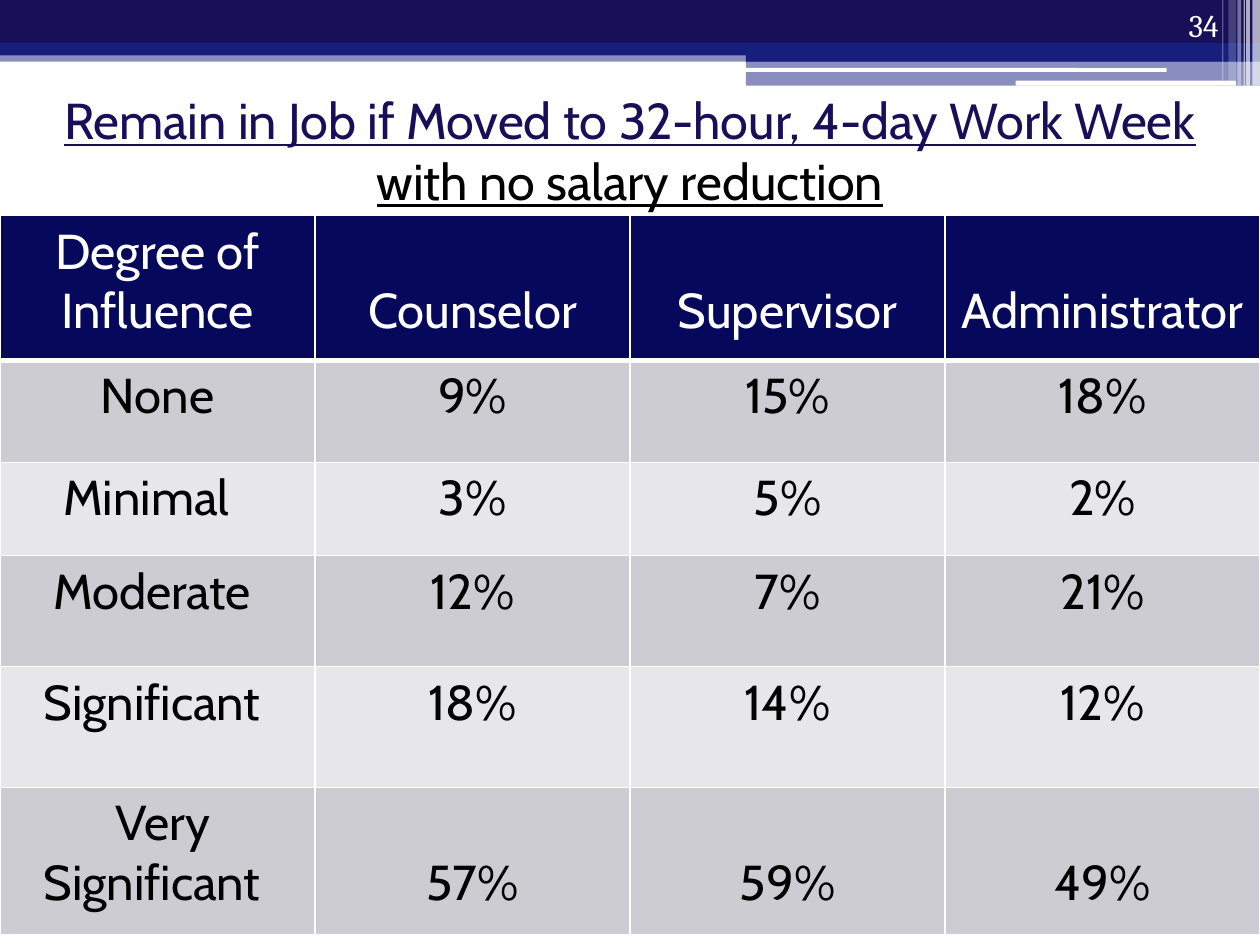
from lxml import etree
from pptx import Presentation
from pptx.dml.color import RGBColor
from pptx.enum.shapes import MSO_SHAPE
from pptx.enum.text import MSO_ANCHOR, PP_ALIGN
from pptx.oxml.ns import qn
from pptx.util import Inches, Pt

RECT, ROUNDED = MSO_SHAPE.RECTANGLE, MSO_SHAPE.ROUNDED_RECTANGLE
CENTER, RIGHT = PP_ALIGN.CENTER, PP_ALIGN.RIGHT
TOP, MIDDLE, BOTTOM = MSO_ANCHOR.TOP, MSO_ANCHOR.MIDDLE, MSO_ANCHOR.BOTTOM

COLUMNS, ROWS = 100, 75
NAVY, BLUE, WHITE, BLACK = "171059", "161E7E", "FFFFFF", "000000"
HEADER, BANDS = "06085B", ("E7E7EA", "CCCCD2")
BODY_SIZE, TEXT_LINE = 28, 4.7


def color(hex_code):
    return RGBColor.from_string(hex_code)


class SlideBuilder:
    """Holds the style and the current slide; lengths are grid columns and rows."""

    font = "Cabin"

    def __init__(self, deck):
        self.width, self.height = deck.slide_width, deck.slide_height
        self.slide = deck.slides.add_slide(deck.slide_layouts[6])

    def x(self, columns):
        return round(self.width * columns / COLUMNS)

    def y(self, rows):
        return round(self.height * rows / ROWS)

    def area(self, left, top, width, height):
        return self.x(left), self.y(top), self.x(width), self.y(height)

    def bar(self, box, fill, opacity=100, kind=RECT):
        bar = self.slide.shapes.add_shape(kind, *self.area(*box))
        bar.shadow.inherit = False
        bar.line.fill.background()
        bar.fill.solid()
        bar.fill.fore_color.rgb = color(fill)
        if opacity < 100:
            rgb = bar.fill._xPr.find(".//" + qn("a:srgbClr"))
            etree.SubElement(rgb, qn("a:alpha"), val=str(opacity * 1000))

    def style(self, run, size, ink, font=None, underline=None):
        run.font.name = font or self.font
        run.font.size = Pt(size)
        run.font.bold = False
        run.font.underline = underline
        run.font.color.rgb = color(ink)

    def text(self, box, parts, size, anchor, align, font=None, underline=None):
        frame = self.slide.shapes.add_textbox(*self.area(*box)).text_frame
        frame.word_wrap = True
        frame.vertical_anchor = anchor
        paragraph = frame.paragraphs[0]
        paragraph.alignment = align
        for words, ink in parts:
            run = paragraph.add_run()
            run.text = words
            self.style(run, size, ink, font, underline)

    def borders(self, cell, **widths):
        properties = cell._tc.get_or_add_tcPr()
        for index, side in enumerate("LRTB"):
            line = etree.Element(qn("a:ln" + side), w=str(Pt(widths.get(side, 1))))
            fill = etree.SubElement(line, qn("a:solidFill"))
            etree.SubElement(fill, qn("a:srgbClr"), val=WHITE)
            properties.insert(index, line)

    def table(self, box, rows, heights):
        grid = self.slide.shapes.add_table(len(rows), len(rows[0]), *self.area(*box)).table
        for r, (values, height) in enumerate(zip(rows, heights)):
            grid.rows[r].height = self.y(height)
            two_line_label = r in (0, len(rows) - 1)
            for c, value in enumerate(values):
                cell = grid.cell(r, c)
                cell.fill.solid()
                cell.fill.fore_color.rgb = color(BANDS[r % 2] if r else HEADER)
                self.borders(cell, **({"B": 3} if r == 0 else {"T": 3} if r == 1 else {}))
                cell.vertical_anchor = TOP
                # Values sit level with the second line of a two-line label
                if two_line_label and c:
                    cell.margin_top = self.y(0.5 + TEXT_LINE)
                cell.text_frame.text = value
                paragraph = cell.text_frame.paragraphs[0]
                paragraph.alignment = CENTER
                self.style(paragraph.runs[0], BODY_SIZE, BLACK if r else WHITE)
        return grid


def main():
    deck = Presentation()
    deck.slide_width, deck.slide_height = Inches(10), Inches(7.5)
    page = SlideBuilder(deck)

    # Banner across the top
    page.bar((0, 4, 100, 0.9), BLUE, 50)
    page.bar((0, 0, 100, 3.4), NAVY)
    page.bar((0, 3.4, 100, 1), BLUE)
    page.bar((59.2, 3.9, 40.8, 1), BLUE)
    page.bar((59.2, 4.8, 40.8, 2), BLUE, 50)
    page.bar((59.1, 5.4, 33.5, 0.3), WHITE, kind=ROUNDED)
    page.bar((80.6, 6.4, 17.5, 0.4), WHITE, kind=ROUNDED)

    # Stripes at the right edge: left, width, height, opacity
    for left, width, height, opacity in (
        (99.4, 0.6, 6.8, 65), (98.9, 0.3, 6.8, 65), (98.7, 0.1, 6.8, 60),
        (98.2, 0.3, 6.8, 40), (97.5, 0.6, 6.4, 20), (97, 0.1, 6.4, 30),
    ):
        page.bar((left, 0, width, height), WHITE, opacity)

    # Title
    page.text((3.5, 6.6, 93, 10.6),
              [("Remain in Job if Moved to 32-hour, 4-day Work Week ", NAVY),
               ("with no salary reduction", BLACK)],
              28.8, MIDDLE, CENTER, underline=True)

    # Survey results
    results = page.table((0, 17.1, 100, 57), [
        ("Degree of Influence", "Counselor", "Supervisor", "Administrator"),
        ("None", "9%", "15%", "18%"),
        ("Minimal ", "3%", "5%", "2%"),
        ("Moderate ", "12%", "7%", "21%"),
        ("Significant ", "18%", "14%", "12%"),
        (" Very Significant ", "57%", "59%", "49%"),
    ], (11.5, 8.1, 7.4, 8.8, 9.6, 11.7))
    results.cell(2, 0).margin_right = page.x(1.9)

    # Page number
    page.text((89.4, 0, 8.3, 4), [("34", WHITE)], 18, BOTTOM, RIGHT, font="Cambria")

    deck.save("out.pptx")


if __name__ == "__main__":
    main()
